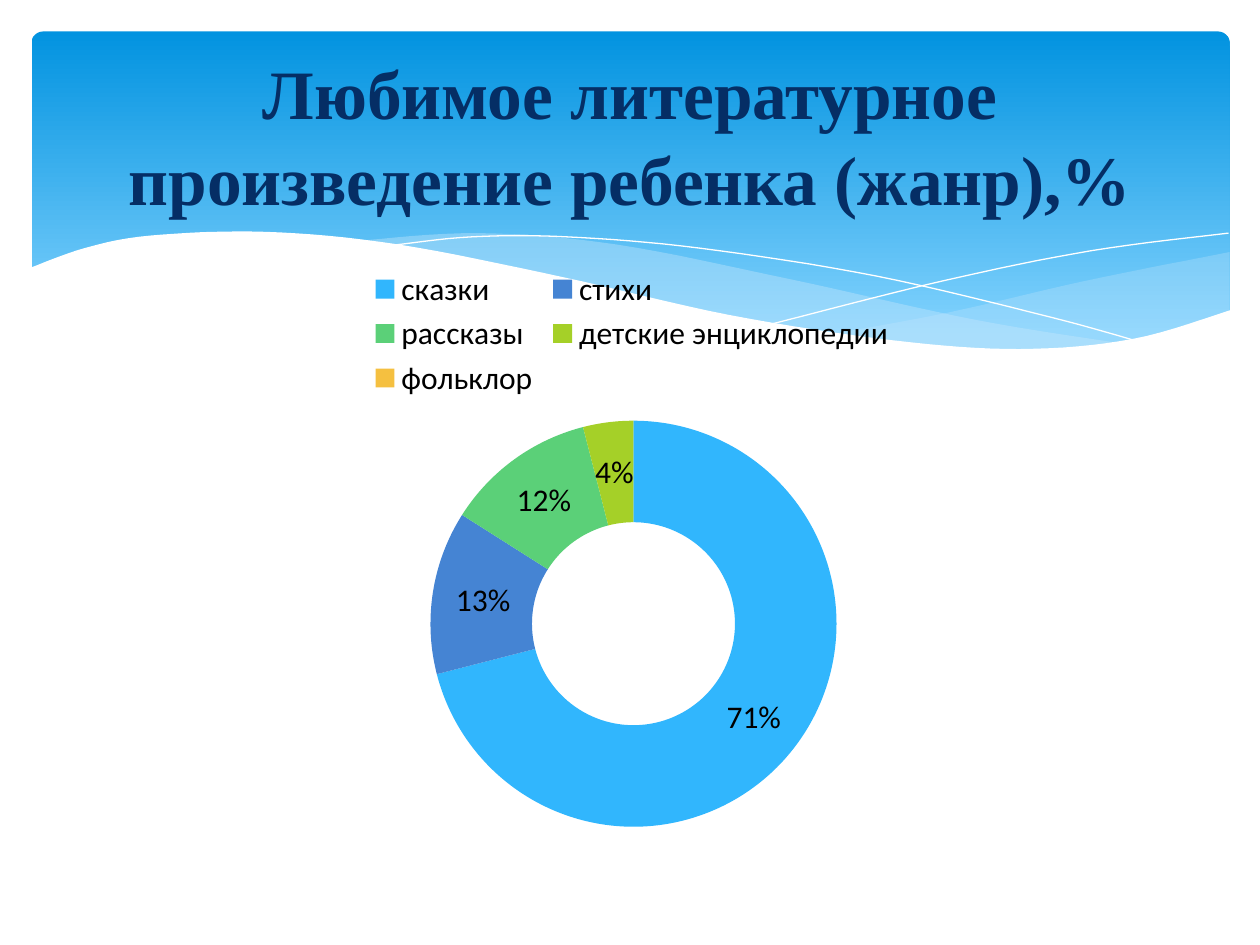
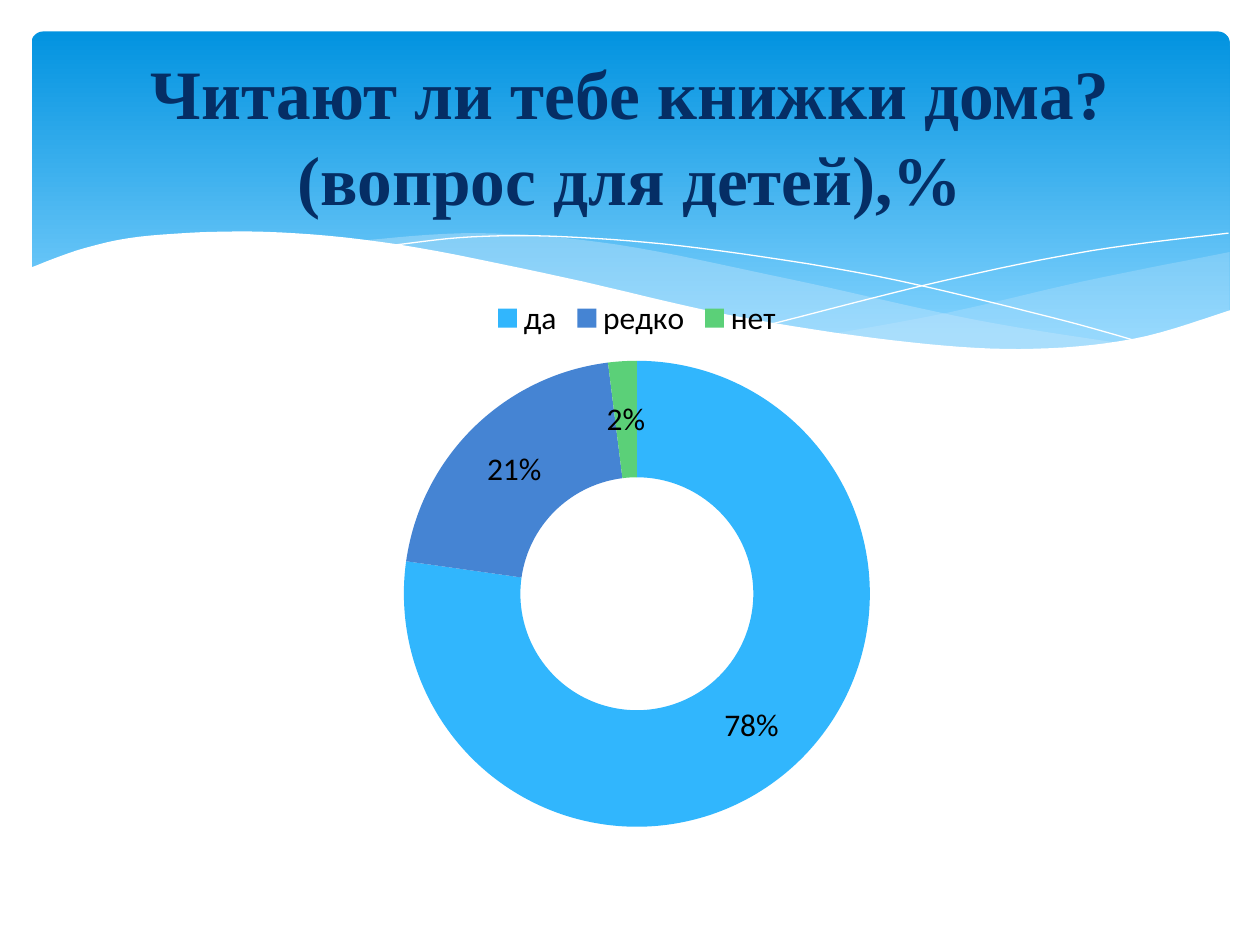
from dataclasses import dataclass
from typing import NamedTuple, Optional

from lxml import etree
from pptx import Presentation
from pptx import oxml, util as u
from pptx.chart import data as cd
from pptx.dml import color as dc
from pptx.enum import chart as ec, shapes as es, text as et
from pptx.oxml import ns

# Grid: 1000 columns by 750 rows, square cells
COLS, ROWS = 1000, 750
CELL = u.Inches(10) // COLS
FINE = 10  # pen steps per cell
STEPS = 8  # pieces between two knots of a curve

SKY, PALE, MIST, WHITE = "0293E0", "83D3FE", "C6E7FC", "FFFFFF"
NAVY, BLACK = "052E65", "000000"
SLICES = ("31B6FD", "4584D3", "5BD078", "A5D028", "F5C040")

Dot = tuple[float, float]
Arc = tuple[Dot, ...]


class Box(NamedTuple):
    col: float
    row: float
    wide: float
    high: float

    def place(self) -> tuple[int, ...]:
        return tuple(u.Emu(int(n * CELL)) for n in self)


@dataclass(frozen=True)
class Wave:
    arcs: tuple[Arc, ...]  # knots of smooth curves, joined end to end
    fill: Optional[str] = None  # without a fill it is a white hairline
    alpha: int = 100


@dataclass(frozen=True)
class Poll:
    title: str
    box: Box
    votes: dict[str, Optional[int]]


BAND = Box(25, 25, 951, 270)
TITLE = Box(50, 37, 900, 137)

SWELL = Wave((
    ((976, 200), (861, 223), (753, 248), (661, 265)),
    ((661, 265), (757, 276), (835, 277), (921, 265), (976, 247)),
), MIST, 29)
CREST = Wave((
    ((893, 273), (775, 254), (629, 222), (489, 194), (380, 185), (286, 191)),
    ((286, 191), (404, 211), (566, 248), (722, 274), (818, 278), (893, 273)),
), MIST, 40)
FALL = Wave((((309, 195), (374, 188), (450, 188), (556, 197), (695, 219),
              (831, 251), (907, 272)),))
RISE = Wave((((613, 257), (748, 223), (866, 199), (975, 185)),))
FOOT = Wave((
    ((977, 246), (899, 269), (809, 277), (708, 270), (579, 250), (447, 220),
     (316, 194), (211, 184), (119, 187), (67, 197), (23, 213)),
    ((23, 329), (977, 329)),
), WHITE)
WAVES = (SWELL, CREST, FALL, RISE, FOOT)

POLLS = (
    Poll("Любимое литературное произведение ребенка (жанр),%",
         Box(98, 202, 807, 468),
         {"сказки": 71, "стихи": 13, "рассказы": 12,
          "детские энциклопедии": 4, "фольклор": None}),
    Poll("Читают ли тебе книжки дома?\v(вопрос для детей),%",
         Box(106, 225, 799, 445),
         {"да": 78, "редко": 21, "нет": 2}),
)


def blend(a: float, b: float, c: float, d: float, t: float) -> float:
    """Catmull-Rom value between b and c."""
    return b + t / 2 * (c - a + t * (2 * a - 5 * b + 4 * c - d
                                     + t * (3 * (b - c) + d - a)))


def smooth(arc: Arc) -> list[Dot]:
    """Run a smooth curve through the knots of an arc."""
    knots = (arc[0], *arc, arc[-1])
    dots = [tuple(FINE * blend(*axis, step / STEPS)
                  for axis in zip(*knots[i:i + 4]))
            for i in range(len(arc) - 1) for step in range(STEPS)]
    return dots + [tuple(FINE * n for n in arc[-1])]


def tint(part, code: str, alpha: int = 100) -> None:
    """Give a solid fill or a font the colour."""
    if hasattr(part, "solid"):
        part.solid()
        part.fore_color.rgb = dc.RGBColor.from_string(code)
    else:
        part.color.rgb = dc.RGBColor.from_string(code)


def draw_band(slide):
    band = slide.shapes.add_shape(
        es.MSO_SHAPE.ROUNDED_RECTANGLE, *BAND.place())
    band.adjustments[0] = 0.034
    band.shadow.inherit = False
    band.line.fill.background()
    band.fill.gradient()
    band.fill.gradient_angle = 270
    for stop, spot, code in zip(band.fill.gradient_stops, (0, 0.9), (SKY, PALE)):
        stop.position = spot
        stop.color.rgb = dc.RGBColor.from_string(code)
    return band


def draw_wave(slide, wave: Wave):
    dots = [dot for arc in wave.arcs for dot in smooth(arc)]
    pen = slide.shapes.build_freeform(*dots[0], scale=CELL / FINE)
    pen.add_line_segments(dots[1:], close=wave.fill is not None)
    shape = pen.convert_to_shape()
    shape.shadow.inherit = False
    if wave.fill:
        tint(shape.fill, wave.fill)
        shape.line.fill.background()
        if wave.alpha < 100:
            clr = next(shape.element.spPr.iter(ns.qn("a:srgbClr")))
            etree.SubElement(clr, ns.qn("a:alpha"), val=str(wave.alpha * 1000))
    else:
        shape.fill.background()
        tint(shape.line.fill, WHITE)
        shape.line.width = u.Pt(0)
    return shape


def dress(layout, slide) -> None:
    """Draw the shared band, then hand it to the layout."""
    parts = [draw_band(slide)] + [draw_wave(slide, wave) for wave in WAVES]
    for spot, part in enumerate(parts, start=2):
        layout.shapes.element.insert(spot, part.element)


def set_title(slide, words: str) -> None:
    frame = slide.shapes.title.text_frame
    frame.text = words
    frame.word_wrap = True
    frame.auto_size = et.MSO_AUTO_SIZE.NONE
    frame.vertical_anchor = et.MSO_ANCHOR.MIDDLE
    line = frame.paragraphs[0]
    line.alignment = et.PP_ALIGN.CENTER
    line.line_spacing = 1.04
    for run in line.runs:
        run.font.name, run.font.size = "Times New Roman", u.Pt(39.6)
        run.font.bold = True
        tint(run.font, NAVY)


def add_ring(slide, poll: Poll) -> None:
    data = cd.CategoryChartData()
    data.categories = list(poll.votes)
    data.add_series("Series 1", list(poll.votes.values()))
    chart = slide.shapes.add_chart(
        ec.XL_CHART_TYPE.DOUGHNUT, *poll.box.place(), data).chart
    chart.has_title = False
    chart.font.name, chart.font.size = "Calibri", u.Pt(18)
    tint(chart.font, BLACK)
    chart.has_legend = True
    chart.legend.position = ec.XL_LEGEND_POSITION.TOP
    chart.legend.include_in_layout = False

    # slices and their labels
    plot = chart.plots[0]
    plot.vary_by_categories = True
    plot.has_data_labels = True
    tags = plot.data_labels
    tags.show_value, tags.show_percentage = True, False
    tags.number_format, tags.number_format_is_linked = '0"%"', False
    for spot, code in zip(range(len(poll.votes)), SLICES):
        look = plot.series[0].points[spot].format
        tint(look.fill, code)
        look.line.fill.background()

    # clear ground, so the wave shows behind the legend
    clear = oxml.parse_xml(
        f"<c:spPr {ns.nsdecls('c', 'a')}><a:noFill/>"
        "<a:ln><a:noFill/></a:ln></c:spPr>")
    chart.element.find(ns.qn("c:chart")).addnext(clear)


def main() -> None:
    prs = Presentation()
    prs.slide_width, prs.slide_height = COLS * CELL, ROWS * CELL
    layout = prs.slide_layouts[5]
    head = layout.placeholders[0]
    head.left, head.top, head.width, head.height = TITLE.place()
    for poll in POLLS:
        slide = prs.slides.add_slide(layout)
        if poll is POLLS[0]:
            dress(layout, slide)
        add_ring(slide, poll)
        set_title(slide, poll.title)
    prs.save("out.pptx")


if __name__ == "__main__":
    main()
